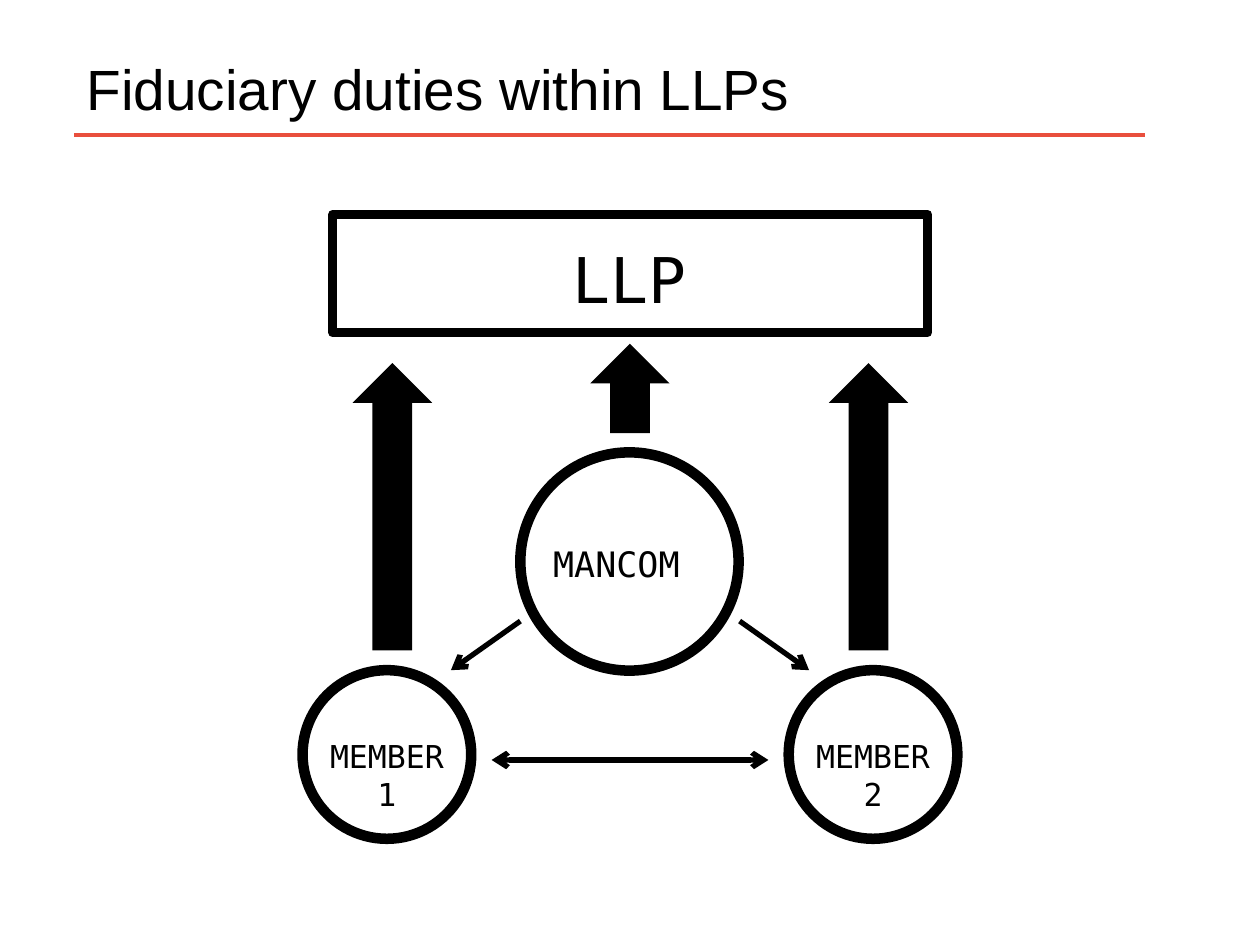
from pptx import Presentation
from pptx.dml.color import RGBColor
from pptx.enum.shapes import MSO_CONNECTOR, MSO_SHAPE
from pptx.enum.text import MSO_ANCHOR, PP_ALIGN
from pptx.oxml.ns import qn
from pptx.util import Cm, Pt
from lxml.etree import SubElement

BLACK = "000000"
RED = "E94F3D"
MONO = "DejaVu Sans Mono"


def paint(color, value):
    color.rgb = RGBColor.from_string(value)


def label(slide, text, box, size, font=MONO, align=PP_ALIGN.LEFT, anchor=MSO_ANCHOR.TOP):
    frame = slide.shapes.add_textbox(*map(Cm, box)).text_frame
    frame.word_wrap = True
    frame.vertical_anchor = anchor
    para = frame.paragraphs[0]
    para.text = text
    para.alignment = align
    para.font.size = Pt(size)
    para.font.name = font
    paint(para.font.color, BLACK)


def outline(slide, kind, box, width):
    shape = slide.shapes.add_shape(kind, *map(Cm, box))
    shape.shadow.inherit = False
    shape.fill.background()
    shape.line.width = Pt(width)
    paint(shape.line.color, BLACK)


def block(slide, box):
    shape = slide.shapes.add_shape(MSO_SHAPE.UP_ARROW, *map(Cm, box))
    shape.shadow.inherit = False
    shape.fill.solid()
    paint(shape.fill.fore_color, BLACK)
    shape.line.fill.background()


def link(slide, start, end, width=3, color=BLACK, tips=()):
    line = slide.shapes.add_connector(MSO_CONNECTOR.STRAIGHT, *map(Cm, start + end))
    line.line.width = Pt(width)
    paint(line.line.color, color)
    props = line._element.spPr
    for tip in tips:
        SubElement(props.find(qn("a:ln")), qn(tip), type="arrow")
    SubElement(props, qn("a:effectLst"))


def main():
    deck = Presentation()
    deck.slide_width, deck.slide_height = Cm(25.4), Cm(19.05)
    slide = deck.slides.add_slide(deck.slide_layouts[6])

    link(slide, (1.5, 2.72), (23.09, 2.72), 2.25, RED)
    label(slide, "Fiduciary duties within LLPs", (1.5, 0.81, 15.6, 1.93), 32.4,
          "Arial", anchor=MSO_ANCHOR.MIDDLE)

    outline(slide, MSO_SHAPE.RECTANGLE, (6.71, 4.32, 11.99, 2.39), 5)
    label(slide, "LLP", (11.3, 4.72, 3, 1.8), 36)
    outline(slide, MSO_SHAPE.OVAL, (10.49, 9.12, 4.4, 4.4), 6)
    label(slide, "MANCOM", (10.9, 10.82, 3.81, 1.12), 20)

    for name, left in (("MEMBER 1", 6.1), ("MEMBER 2", 15.9)):
        outline(slide, MSO_SHAPE.OVAL, (left, 13.51, 3.4, 3.4), 6)
        label(slide, name, (left, 14.73, 3.4, 1.8), 18, align=PP_ALIGN.CENTER)

    for left, top, height in ((7.11, 7.32, 5.79), (16.71, 7.32, 5.79), (11.9, 6.93, 1.8)):
        block(slide, (left, top, 1.6, height))

    link(slide, (9.91, 15.32), (15.49, 15.32), tips=("a:headEnd", "a:tailEnd"))
    for start, end in ((14.91, 16.31), (10.49, 9.09)):
        link(slide, (start, 12.52), (end, 13.51), tips=("a:tailEnd",))

    deck.save("out.pptx")


if __name__ == "__main__":
    main()
